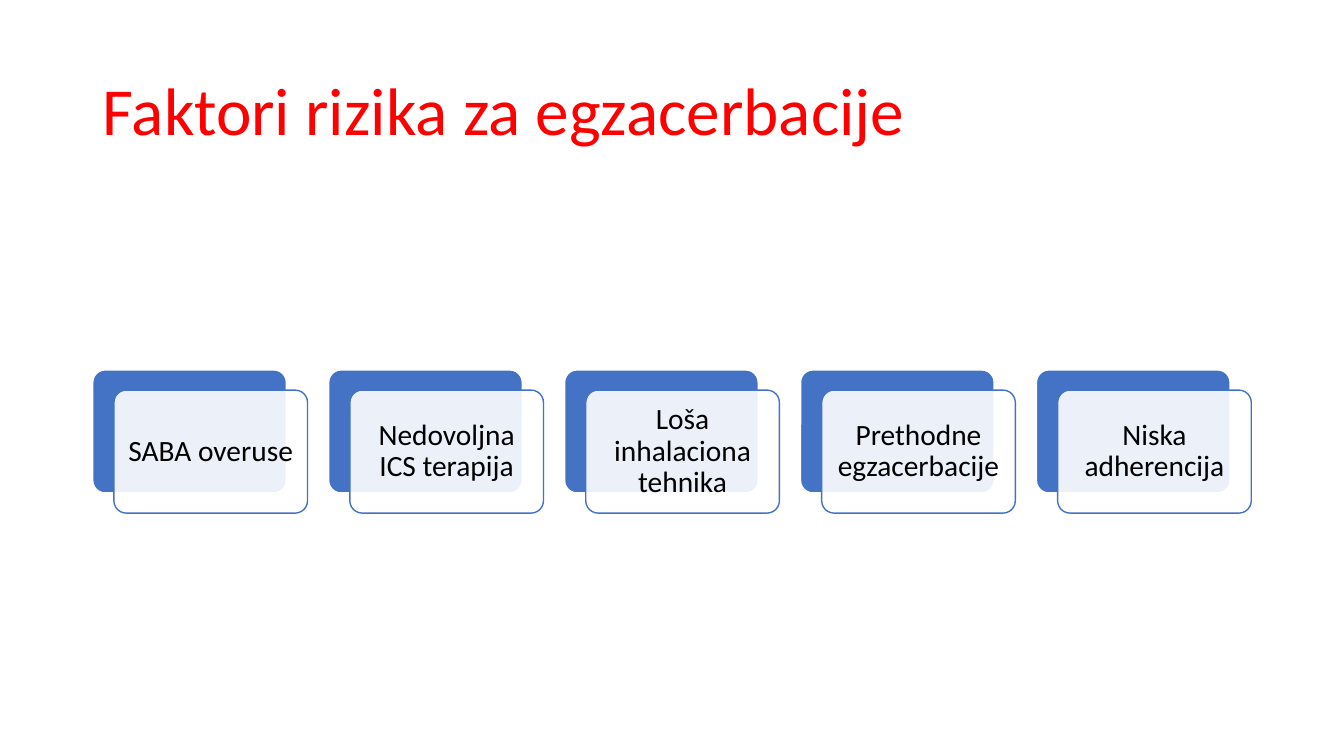
from dataclasses import dataclass

from lxml.etree import SubElement
from pptx import Presentation
from pptx.dml.color import RGBColor
from pptx.enum.shapes import MSO_SHAPE
from pptx.enum.text import MSO_ANCHOR, PP_ALIGN
from pptx.oxml.ns import qn
from pptx.util import Inches, Pt


@dataclass(frozen=True)
class Theme:
    font: str = "Calibri"
    red: RGBColor = RGBColor(0xFF, 0, 0)
    blue: RGBColor = RGBColor(0x44, 0x72, 0xC4)
    white: RGBColor = RGBColor(0xFF, 0xFF, 0xFF)
    black: RGBColor = RGBColor(0, 0, 0)
    head: int = 48
    body: int = 21


THEME = Theme()
RISKS = [
    "SABA overuse",
    "Nedovoljna ICS terapija",
    "Loša inhalaciona tehnika",
    "Prethodne egzacerbacije",
    "Niska adherencija",
]
LEFT, TOP, STEP = 0.92, 3.67, 2.34
WIDE, HIGH = 1.92, 1.22
SHIFT_X, SHIFT_Y = 0.21, 0.2


def set_text(frame, text, size, color, align):
    frame.word_wrap = True
    frame.vertical_anchor = MSO_ANCHOR.MIDDLE
    frame.text = text
    para = frame.paragraphs[0]
    para.alignment = align
    para.line_spacing = 0.9
    font = para.runs[0].font
    font.name = THEME.font
    font.size = Pt(size)
    font.color.rgb = color


def add_title(slide, text):
    title = slide.shapes.title
    title.left, title.top = Inches(0.92), Inches(0.4)
    title.width, title.height = Inches(11.5), Inches(1.45)
    set_text(title.text_frame, text, THEME.head, THEME.red, PP_ALIGN.LEFT)


def add_panel(slide, left, top, fill, line):
    panel = slide.shapes.add_shape(
        MSO_SHAPE.ROUNDED_RECTANGLE,
        Inches(left), Inches(top), Inches(WIDE), Inches(HIGH))
    panel.adjustments[0] = 0.1
    panel.shadow.inherit = False
    panel.fill.solid()
    panel.fill.fore_color.rgb = fill
    panel.line.color.rgb = line
    panel.line.width = Pt(1)
    return panel


def set_alpha(shape, percent):
    color = shape.fill._xPr.find(qn("a:solidFill"))[0]
    SubElement(color, qn("a:alpha"), val=str(percent * 1000))


def add_card(slide, left, text):
    """Draw a blue panel with a see-through, labelled panel over it."""
    add_panel(slide, left, TOP, THEME.blue, THEME.white)
    front = add_panel(slide, left + SHIFT_X, TOP + SHIFT_Y,
                      THEME.white, THEME.blue)
    set_alpha(front, 90)
    frame = front.text_frame
    frame.margin_left = frame.margin_right = Inches(0.09)
    frame.margin_top = frame.margin_bottom = Inches(0.09)
    set_text(frame, text, THEME.body, THEME.black, PP_ALIGN.CENTER)


def main():
    deck = Presentation()
    deck.slide_width, deck.slide_height = Inches(13.33), Inches(7.5)
    slide = deck.slides.add_slide(deck.slide_layouts.get_by_name("Title Only"))
    add_title(slide, "Faktori rizika za egzacerbacije")
    for i, risk in enumerate(RISKS):
        add_card(slide, LEFT + i * STEP, risk)
    deck.save("out.pptx")


if __name__ == "__main__":
    main()
